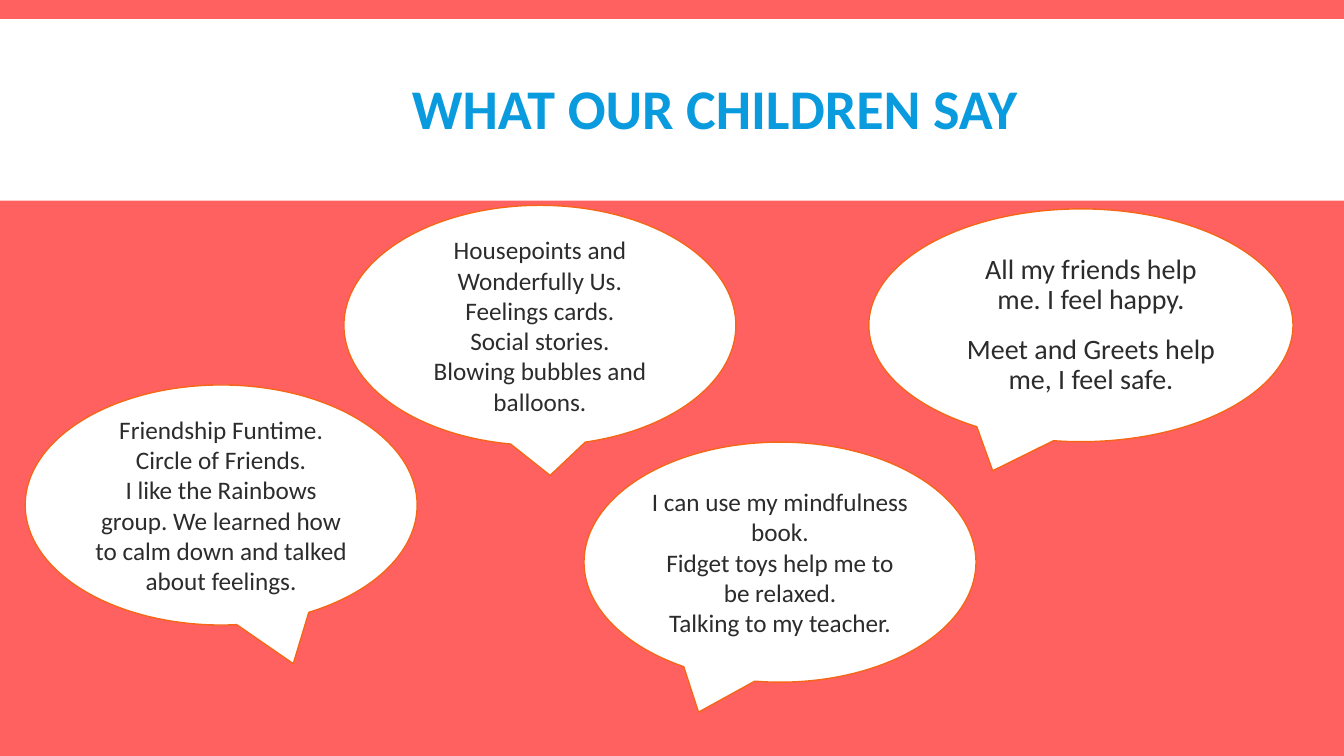
from dataclasses import dataclass

from pptx import Presentation
from pptx.dml.color import RGBColor
from pptx.enum.shapes import MSO_SHAPE
from pptx.enum.text import MSO_ANCHOR, PP_ALIGN
from pptx.util import Pt

RECT = MSO_SHAPE.RECTANGLE
BUBBLE = MSO_SHAPE.OVAL_CALLOUT
MIDDLE = MSO_ANCHOR.MIDDLE
CENTER = PP_ALIGN.CENTER
TITLE_ONLY = 5


@dataclass(frozen=True)
class Theme:
    font: str = "Calibri"
    back: RGBColor = RGBColor(0xFF, 0x61, 0x61)
    white: RGBColor = RGBColor(0xFF, 0xFF, 0xFF)
    edge: RGBColor = RGBColor(0xF5, 0x66, 0x17)
    blue: RGBColor = RGBColor(0x09, 0x9B, 0xDD)
    ink: RGBColor = RGBColor(0x2C, 0x2C, 0x2C)
    head: int = 40
    large: int = 20
    body: int = 18


THEME = Theme()

# Bubble size and default tail tip, as shares of the bubble from its centre
WIDE, HIGH = 280, 171.5
TAIL = (-0.208, 0.625)

# Left, top, tail tip, lines
QUOTES = [
    (18, 275, (0.184, 0.661), [
        "Friendship Funtime.",
        "Circle of Friends.",
        "I like the Rainbows group. We learned how to calm down "
        "and talked about feelings.",
    ]),
    (417.2, 315.8, TAIL, [
        "I can use my mindfulness book.",
        "Fidget toys help me to be relaxed.",
        "Talking to my teacher.",
    ]),
    (245.7, 146.7, (0.026, 0.625), [
        "Housepoints and Wonderfully Us.",
        "Feelings cards.",
        "Social stories.",
        "Blowing bubbles and balloons.",
    ]),
]
FRIENDS = [
    "All my friends help me. I feel happy.",
    "Meet and Greets help me, I feel safe.",
]


def write(frame, lines, size, color, bold=False):
    """Fill a frame with one centred paragraph per line."""
    frame.word_wrap = True
    frame.vertical_anchor = MIDDLE
    for i, line in enumerate(lines):
        para = frame.add_paragraph() if i else frame.paragraphs[0]
        para.alignment = CENTER
        run = para.add_run()
        run.text = line
        font = run.font
        font.name, font.size, font.bold = THEME.font, Pt(size), bold
        font.color.rgb = color
    return frame.paragraphs


def add_form(slide, kind, left, top, width, height):
    """Add a plain white shape."""
    form = slide.shapes.add_shape(kind, Pt(left), Pt(top), Pt(width), Pt(height))
    form.shadow.inherit = False
    form.fill.solid()
    form.fill.fore_color.rgb = THEME.white
    form.line.fill.background()
    return form


def add_title(slide, text):
    """Place the title on its white band."""
    band = add_form(slide, RECT, 0, 13.7, 960, 129.6)
    title = slide.shapes.title
    title.left, title.top = Pt(95.8), Pt(20.9)
    title.width, title.height = Pt(829.4), Pt(118.8)
    title._element.addprevious(band._element)
    para = write(title.text_frame, [text], THEME.head, THEME.blue, True)[0]
    para.line_spacing = 0.85


def add_bubble(slide, left, top, tail, lines, width=WIDE, height=HIGH,
               size=THEME.body):
    """Add a speech bubble and return it."""
    form = add_form(slide, BUBBLE, left, top, width, height)
    form.line.color.rgb = THEME.edge
    form.line.width = Pt(1)
    for i, share in enumerate(tail):
        form.adjustments[i] = share
    write(form.text_frame, lines, size, THEME.ink)
    return form


def main():
    deck = Presentation()
    deck.slide_width, deck.slide_height = Pt(960), Pt(540)
    slide = deck.slides.add_slide(deck.slide_layouts[TITLE_ONLY])
    fill = slide.background.fill
    fill.solid()
    fill.fore_color.rgb = THEME.back

    add_title(slide, "WHAT OUR CHILDREN SAY")

    # Larger bubble with spaced paragraphs, set a little to the right
    large = add_bubble(slide, 620.6, 149.2, TAIL, FRIENDS, 303, 166.3, THEME.large)
    large.text_frame.margin_left = Pt(21.6)
    for para in large.text_frame.paragraphs:
        para.line_spacing = 0.9
        para.space_before, para.space_after = Pt(12), Pt(2)

    # Equal bubbles
    for quote in QUOTES:
        add_bubble(slide, *quote)

    deck.save("out.pptx")


if __name__ == "__main__":
    main()
